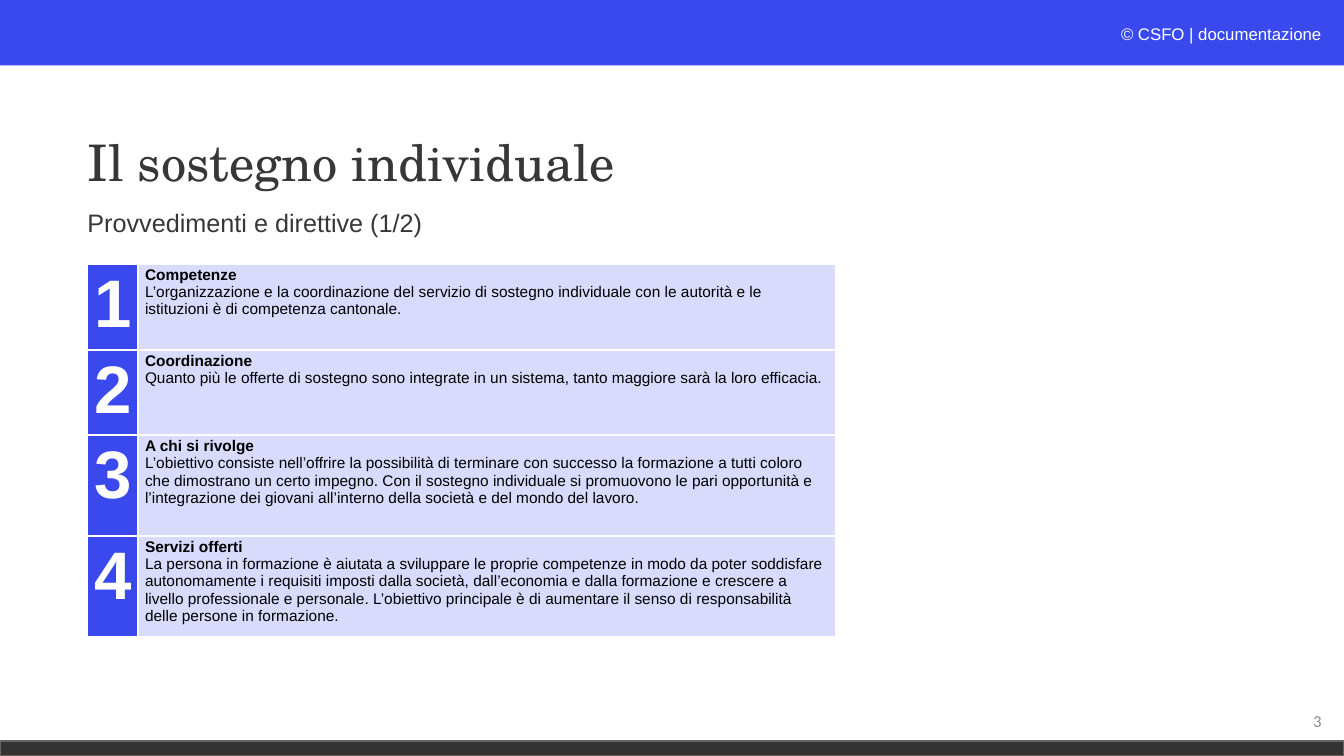
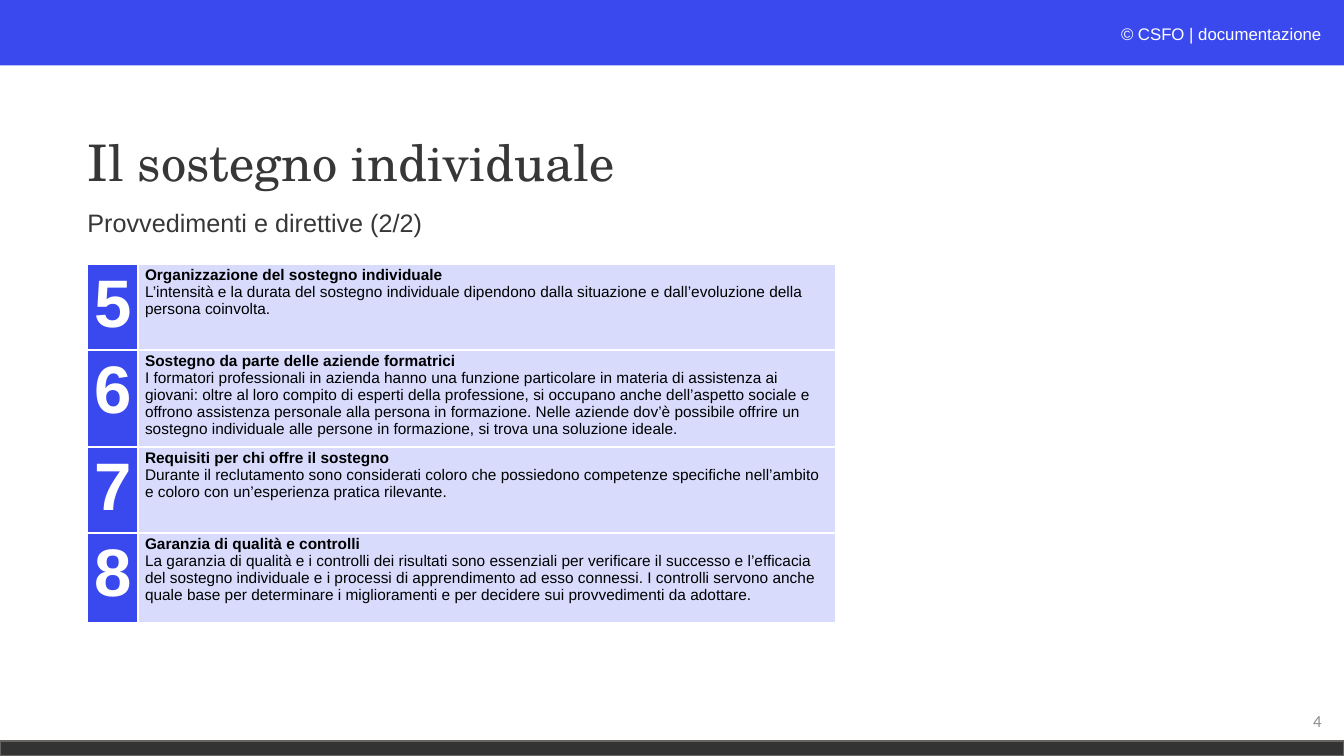
from dataclasses import dataclass

from lxml.etree import SubElement
from pptx import Presentation
from pptx.dml.color import RGBColor
from pptx.enum.shapes import MSO_SHAPE
from pptx.enum.text import MSO_ANCHOR, MSO_AUTO_SIZE, PP_ALIGN
from pptx.oxml import parse_xml
from pptx.oxml.ns import nsdecls, qn
from pptx.slide import Slide
from pptx.table import _Cell
from pptx.text.text import Font, TextFrame
from pptx.util import Pt

COLORS = {
    "blue": "3A49EE",
    "lavender": "D8DBFC",
    "dark": "333333",
    "dark_line": "666360",
    "heading": "373737",
    "page_number": "8C8C8C",
    "copyright": "FCFDFE",
    "white": "FFFFFF",
    "black": "000000",
}
SANS = "Arial"
TITLE_FONT = "TeX Gyre Schola"
NUMBER_FONT = "Calibri"

SLIDE_W, SLIDE_H = 960, 540
TOP_BAND_H, BOTTOM_BAND_H = 46.8, 10.8
TEXT_LEFT, TEXT_W = 55.4, 635
TABLE_LEFT, TABLE_TOP = 62.6, 188.6
COLUMN_WIDTHS = (36, 498.2)
CELL_INSET_X, CELL_INSET_Y = 5, 1.8
BORDER_W = 1.5


@dataclass(frozen=True)
class Measure:
    heading: str
    text: str
    height: float


@dataclass(frozen=True)
class Page:
    number: int
    subtitle: str
    first_measure: int
    measures: tuple[Measure, ...]


TITLE = "Il sostegno individuale"
PAGES = (
    Page(3, "Provvedimenti e direttive (1/2)", 1, (
        Measure(
            "Competenze",
            "L’organizzazione e la coordinazione del servizio di sostegno individuale con le "
            "autorità e le istituzioni è di competenza cantonale.", 58.5),
        Measure(
            "Coordinazione",
            "Quanto più le offerte di sostegno sono integrate in un sistema, tanto maggiore "
            "sarà la loro efficacia.", 58.5),
        Measure(
            "A chi si rivolge",
            "L’obiettivo consiste nell’offrire la possibilità di terminare con successo la "
            "formazione a tutti coloro che dimostrano un certo impegno. Con il sostegno "
            "individuale si promuovono le pari opportunità e l’integrazione dei giovani "
            "all’interno della società e del mondo del lavoro.", 72),
        Measure(
            "Servizi offerti",
            "La persona in formazione è aiutata a sviluppare le proprie competenze in modo da "
            "poter soddisfare autonomamente i requisiti imposti dalla società, dall’economia e "
            "dalla formazione e crescere a livello professionale e personale. L’obiettivo "
            "principale è di aumentare il senso di responsabilità delle persone in "
            "formazione.", 72),
    )),
    Page(4, "Provvedimenti e direttive (2/2)", 5, (
        Measure(
            "Organizzazione del sostegno individuale",
            "L’intensità e la durata del sostegno individuale dipendono dalla situazione e "
            "dall’evoluzione della persona coinvolta.", 58.5),
        Measure(
            "Sostegno da parte delle aziende formatrici",
            "I formatori professionali in azienda hanno una funzione particolare in materia di "
            "assistenza ai giovani: oltre al loro compito di esperti della professione, si "
            "occupano anche dell’aspetto sociale e offrono assistenza personale alla persona in "
            "formazione. Nelle aziende dov’è possibile offrire un sostegno individuale alle "
            "persone in formazione, si trova una soluzione ideale.", 66),
        Measure(
            "Requisiti per chi offre il sostegno",
            "Durante il reclutamento sono considerati coloro che possiedono competenze "
            "specifiche nell’ambito e coloro con un’esperienza pratica rilevante.", 58.5),
        Measure(
            "Garanzia di qualità e controlli",
            "La garanzia di qualità e i controlli dei risultati sono essenziali per verificare "
            "il successo e l’efficacia del sostegno individuale e i processi di apprendimento "
            "ad esso connessi. I controlli servono anche quale base per determinare i "
            "miglioramenti e per decidere sui provvedimenti da adottare.", 64),
    )),
)


def rgb(name: str) -> RGBColor:
    return RGBColor.from_string(COLORS[name])


def style(font: Font, size: float, color: str, name: str = SANS, bold: bool = False) -> None:
    font.name = name
    font.size = Pt(size)
    font.bold = bold
    font.color.rgb = rgb(color)


def add_band(s: Slide, top: float, height: float, fill: str, line: str | None = None) -> None:
    sp = s.shapes.add_shape(MSO_SHAPE.RECTANGLE, 0, Pt(top), Pt(SLIDE_W), Pt(height))
    sp.shadow.inherit = False
    sp.fill.solid()
    sp.fill.fore_color.rgb = rgb(fill)
    if line:
        sp.line.color.rgb = rgb(line)
        sp.line.width = Pt(1)
    else:
        sp.line.fill.background()


def add_text(s: Slide, left: float, top: float, width: float, height: float, text: str,
             align: PP_ALIGN = PP_ALIGN.LEFT) -> TextFrame:
    tf = s.shapes.add_textbox(Pt(left), Pt(top), Pt(width), Pt(height)).text_frame
    tf.word_wrap = True
    tf.text = text
    tf.paragraphs[0].alignment = align
    return tf


def add_frame(s: Slide, number: int) -> None:
    """Draw the bands, the copyright line and the page number."""
    add_band(s, 0, TOP_BAND_H, "blue")
    add_band(s, SLIDE_H - BOTTOM_BAND_H, BOTTOM_BAND_H, "dark", "dark_line")

    p = add_text(s, 620.6, 13.7, 330.5, 21.6, "© ", PP_ALIGN.RIGHT).paragraphs[0]
    style(p.runs[0].font, 12, "copyright")
    p.runs[0].font.italic = True
    r = p.add_run()
    r.text = "CSFO | documentazione"
    style(r.font, 12, "white")

    tf = add_text(s, 735.1, 500.4, 216, 28.8, str(number), PP_ALIGN.RIGHT)
    tf.vertical_anchor = MSO_ANCHOR.MIDDLE
    style(tf.paragraphs[0].runs[0].font, 12, "page_number", NUMBER_FONT)


def add_headings(s: Slide, subtitle: str) -> None:
    sp = s.shapes.title
    sp.left, sp.top, sp.width, sp.height = Pt(TEXT_LEFT), Pt(65.5), Pt(TEXT_W), Pt(104.4)
    tf = sp.text_frame
    tf.text = TITLE
    tf.auto_size = MSO_AUTO_SIZE.NONE
    tf.vertical_anchor = MSO_ANCHOR.MIDDLE
    p = tf.paragraphs[0]
    p.alignment = PP_ALIGN.LEFT
    p.line_spacing = 0.9
    style(p.runs[0].font, 36, "heading", TITLE_FONT)

    p = add_text(s, TEXT_LEFT, 146.9, TEXT_W, 38.9, subtitle).paragraphs[0]
    p.line_spacing = 0.9
    style(p.runs[0].font, 18, "heading")


def format_cell(cell: _Cell, fill: str, sides: str) -> None:
    """Set insets and fill, and white borders on the given sides (in L, R, T, B order)."""
    cell.margin_left = cell.margin_right = Pt(CELL_INSET_X)
    cell.margin_top = cell.margin_bottom = Pt(CELL_INSET_Y)
    cell.fill.solid()
    cell.fill.fore_color.rgb = rgb(fill)
    tc_pr = cell._tc.get_or_add_tcPr()
    for i, side in enumerate(sides):
        ln = parse_xml(f'<a:ln{side} {nsdecls("a")} w="{Pt(BORDER_W)}"/>')
        solid = SubElement(ln, qn("a:solidFill"))
        SubElement(solid, qn("a:srgbClr"), val=COLORS["white"])
        tc_pr.insert(i, ln)


def add_measures(s: Slide, page: Page) -> None:
    heights = [m.height for m in page.measures]
    table = s.shapes.add_table(
        len(heights), len(COLUMN_WIDTHS), Pt(TABLE_LEFT), Pt(TABLE_TOP),
        Pt(sum(COLUMN_WIDTHS)), Pt(sum(heights))).table
    table.first_row = table.horz_banding = False
    for column, width in zip(table.columns, COLUMN_WIDTHS):
        column.width = Pt(width)

    for i, measure in enumerate(page.measures):
        table.rows[i].height = Pt(measure.height)
        number_cell, text_cell = table.cell(i, 0), table.cell(i, 1)

        format_cell(number_cell, "blue", "RTB")
        number_cell.text_frame.text = str(page.first_measure + i)
        p = number_cell.text_frame.paragraphs[0]
        p.alignment = PP_ALIGN.CENTER
        style(p.runs[0].font, 48, "white", bold=True)

        format_cell(text_cell, "lavender", "LRTB")
        tf = text_cell.text_frame
        tf.text = measure.heading
        tf.add_paragraph().text = measure.text
        for p, bold in zip(tf.paragraphs, (True, False)):
            style(p.runs[0].font, 11, "black", bold=bold)


def main() -> None:
    prs = Presentation()
    prs.slide_width, prs.slide_height = Pt(SLIDE_W), Pt(SLIDE_H)
    title_only = prs.slide_layouts.get_by_name("Title Only")
    for page in PAGES:
        s = prs.slides.add_slide(title_only)
        add_frame(s, page.number)
        add_headings(s, page.subtitle)
        add_measures(s, page)
    prs.save("out.pptx")


if __name__ == "__main__":
    main()
